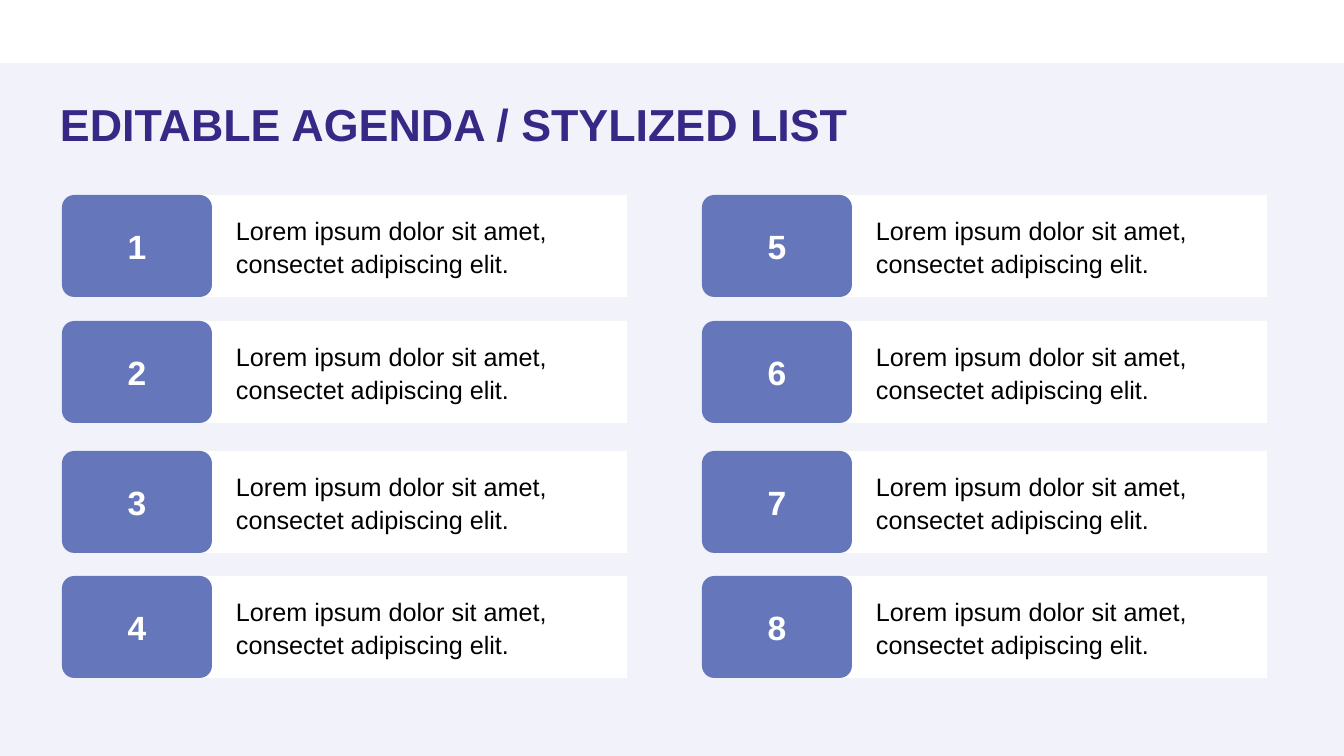
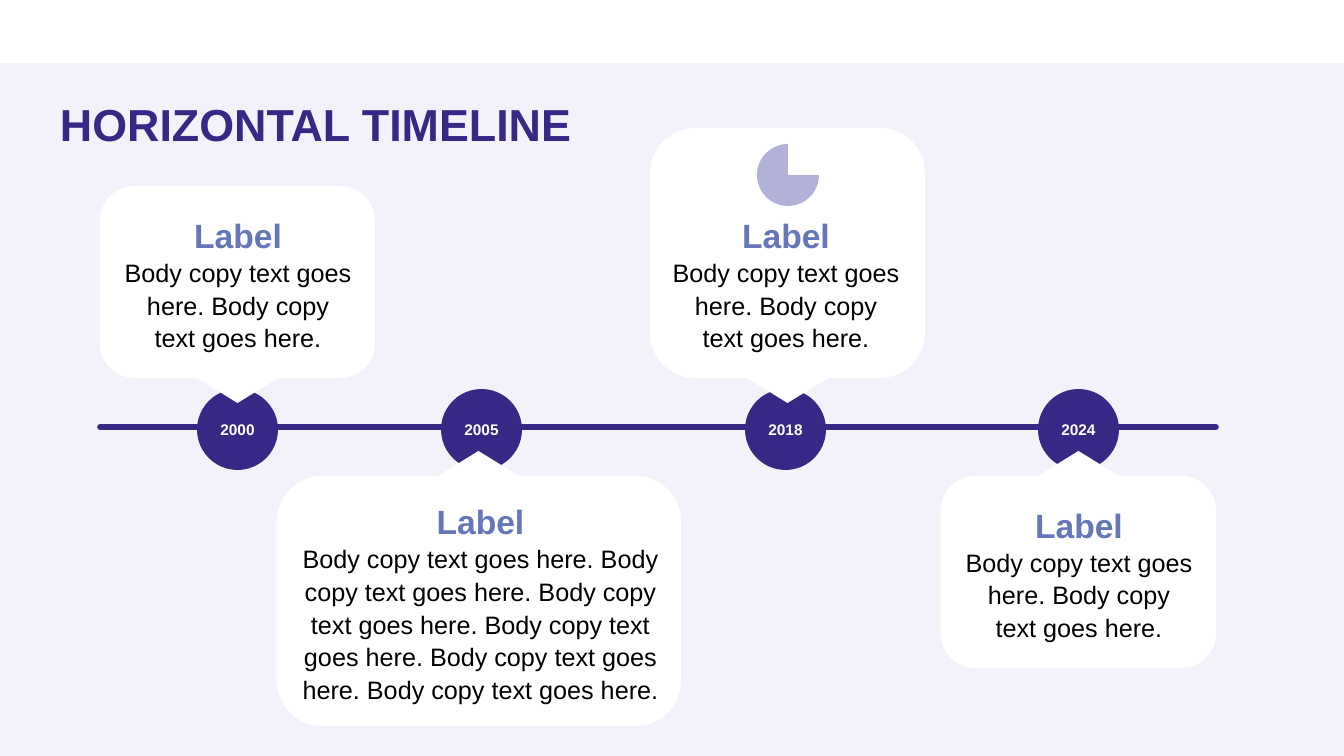
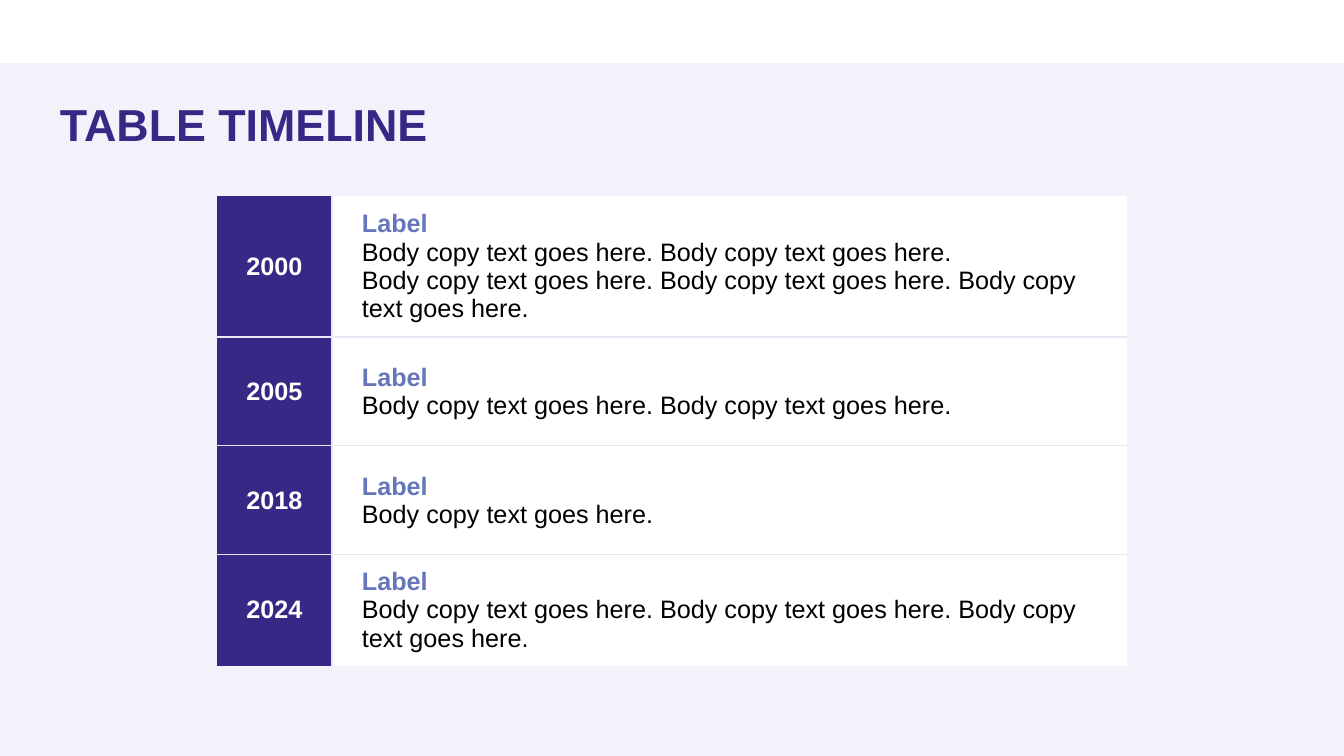
from dataclasses import dataclass

from lxml.etree import SubElement
from pptx import Presentation
from pptx.dml.color import RGBColor
from pptx.enum.shapes import MSO_CONNECTOR, MSO_SHAPE
from pptx.enum.text import MSO_ANCHOR, PP_ALIGN
from pptx.oxml import parse_xml
from pptx.oxml.ns import nsdecls, qn
from pptx.util import Pt

EMU_PER_PX = 914400 / 100.8
SLIDE_WIDTH, SLIDE_HEIGHT = 1344, 756
FONT = "Arial"
COLORS = {
    "panel": "F2F3FA",
    "indigo": "382886",
    "blue": "6577BA",
    "lilac": "B2B1D9",
    "rule": "E6E8F5",
    "white": "FFFFFF",
    "black": "000000",
}
BODY_SPACING = 1.08
SENTENCE = "Body copy text goes here."


@dataclass(frozen=True)
class Rect:
    left: int
    top: int
    width: int
    height: int

    def emu(self) -> tuple:
        return tuple(px(n) for n in (self.left, self.top, self.width, self.height))


@dataclass(frozen=True)
class Line:
    text: str
    size: int
    color: str
    bold: bool = False
    spacing: float = 1.0


@dataclass(frozen=True)
class Milestone:
    year: str
    circle_left: int
    card: Rect
    copy_area: Rect
    sentences: int
    above: bool
    icon: bool = False


@dataclass(frozen=True)
class TableEntry:
    year: str
    paragraphs: tuple


MILESTONES = (
    Milestone("2000", 197, Rect(100, 186, 275, 192), Rect(124, 191, 228, 187), 2, True),
    Milestone("2005", 441, Rect(277, 476, 404, 250), Rect(301, 494, 359, 219), 6, False),
    Milestone("2018", 745, Rect(650, 128, 275, 250), Rect(672, 191, 228, 187), 2, True, True),
    Milestone("2024", 1038, Rect(941, 476, 275, 192), Rect(965, 481, 228, 187), 2, False),
)
ENTRIES = (
    TableEntry("2000", (2, 3)),
    TableEntry("2005", (2,)),
    TableEntry("2018", (1,)),
    TableEntry("2024", (3,)),
)


def px(length: int) -> int:
    return round(length * EMU_PER_PX)


def rgb(name: str) -> RGBColor:
    return RGBColor.from_string(COLORS[name])


def copy_text(sentences: int) -> str:
    return " ".join([SENTENCE] * sentences)


def write(frame, lines: list, align=PP_ALIGN.LEFT, anchor=MSO_ANCHOR.MIDDLE) -> None:
    frame.word_wrap = True
    frame.vertical_anchor = anchor
    for index, line in enumerate(lines):
        para = frame.paragraphs[0] if index == 0 else frame.add_paragraph()
        para.text = line.text
        para.alignment = align
        para.line_spacing = line.spacing
        para.font.name = FONT
        para.font.size = Pt(line.size)
        para.font.bold = line.bold
        para.font.color.rgb = rgb(line.color)


def add_block(page, kind, area: Rect, color: str):
    shape = page.shapes.add_shape(kind, *area.emu())
    shape.shadow.inherit = False
    shape.fill.solid()
    shape.fill.fore_color.rgb = rgb(color)
    shape.line.fill.background()
    return shape


def add_text(page, area: Rect, lines: list, align=PP_ALIGN.LEFT, anchor=MSO_ANCHOR.MIDDLE) -> None:
    frame = page.shapes.add_textbox(*area.emu()).text_frame
    frame.margin_left = frame.margin_top = frame.margin_right = 0
    frame.margin_bottom = px(5)
    write(frame, lines, align, anchor)


def new_page(deck):
    page = deck.slides.add_slide(deck.slide_layouts[6])
    add_block(page, MSO_SHAPE.RECTANGLE, Rect(0, 63, SLIDE_WIDTH, SLIDE_HEIGHT - 63), "panel")
    return page


def add_title(page, text: str) -> None:
    title = Line(text, 32, "indigo", True, 0.9)
    add_text(page, Rect(60, 103, 1225, 84), [title], anchor=MSO_ANCHOR.TOP)


def build_agenda(deck) -> None:
    page = new_page(deck)
    add_title(page, "EDITABLE AGENDA / STYLIZED LIST")
    tops = (195, 321, 451, 576)
    for index in range(8):
        column, row = divmod(index, len(tops))
        left, top = 62 + 640 * column, tops[row]
        # White strip with the item text
        strip = add_block(page, MSO_SHAPE.RECTANGLE, Rect(left + 138, top, 427, 102), "white")
        strip.text_frame.margin_left = px(36)
        item = "Lorem ipsum dolor sit amet, consectet adipiscing elit."
        write(strip.text_frame, [Line(item, 18, "black", spacing=BODY_SPACING)])
        # Number badge over its left end
        badge = add_block(page, MSO_SHAPE.ROUNDED_RECTANGLE, Rect(left, top, 150, 102), "blue")
        badge.adjustments[0] = 0.12
        write(badge.text_frame, [Line(str(index + 1), 24, "white", True)], PP_ALIGN.CENTER)


def add_axis(page) -> None:
    axis = page.shapes.add_connector(MSO_CONNECTOR.STRAIGHT, px(100), px(427), px(1216), px(427))
    axis.line.color.rgb = rgb("indigo")
    axis.line.width = Pt(4)
    axis.line._get_or_add_ln().set("cap", "rnd")
    SubElement(axis._element.spPr, qn("a:effectLst"))


def add_callout(page, milestone: Milestone) -> None:
    card = milestone.card
    body = add_block(page, MSO_SHAPE.ROUNDED_RECTANGLE, card, "white")
    body.adjustments[0] = 0.18
    # Pointer centred on the edge that faces the axis
    width, height = 81, 25
    top = card.top + card.height if milestone.above else card.top - height
    area = Rect(card.left + (card.width - width) // 2, top, width, height)
    pointer = add_block(page, MSO_SHAPE.ISOSCELES_TRIANGLE, area, "white")
    pointer.rotation = 180 if milestone.above else 0
    if milestone.icon:
        add_block(page, MSO_SHAPE.PIE, Rect(757, 144, 62, 62), "lilac")
    lines = [
        Line("Label", 24, "blue", True, BODY_SPACING),
        Line(copy_text(milestone.sentences), 18, "black", spacing=BODY_SPACING),
    ]
    add_text(page, milestone.copy_area, lines, PP_ALIGN.CENTER)


def build_timeline(deck) -> None:
    page = new_page(deck)
    add_title(page, "HORIZONTAL TIMELINE")
    add_axis(page)
    for milestone in MILESTONES:
        circle = add_block(page, MSO_SHAPE.OVAL, Rect(milestone.circle_left, 389, 81, 81), "indigo")
        frame = circle.text_frame
        frame.margin_left = frame.margin_right = 0
        write(frame, [Line(milestone.year, 11, "white", True)], PP_ALIGN.CENTER)
    for milestone in MILESTONES:
        add_callout(page, milestone)


def set_borders(cell, visible: set) -> None:
    properties = cell._tc.get_or_add_tcPr()
    for index, side in enumerate("LRTB"):
        paint = "<a:noFill/>"
        if side in visible:
            paint = f'<a:solidFill><a:srgbClr val="{COLORS["rule"]}"/></a:solidFill>'
        border = f'<a:ln{side} w="12700" {nsdecls("a")}>{paint}</a:ln{side}>'
        properties.insert(index, parse_xml(border))


def build_table(deck) -> None:
    page = new_page(deck)
    add_title(page, "TABLE TIMELINE")
    row_height = 109
    area = Rect(217, 196, 910, row_height * len(ENTRIES))
    table = page.shapes.add_table(len(ENTRIES), 2, *area.emu()).table
    table.first_row = table.horz_banding = False
    for column, width in zip(table.columns, (115, 795)):
        column.width = px(width)
    for index, entry in enumerate(ENTRIES):
        table.rows[index].height = px(row_height)
        year, detail = table.cell(index, 0), table.cell(index, 1)
        write(year.text_frame, [Line(entry.year, 18, "white", True)], PP_ALIGN.CENTER)
        lines = [Line("Label", 18, "blue", True)]
        lines += [Line(copy_text(count), 18, "black") for count in entry.paragraphs]
        write(detail.text_frame, lines)
        detail.margin_left = px(30)
        detail.margin_top = detail.margin_right = detail.margin_bottom = px(10)
        # Rules between the cells only
        inner = {"T"} if index else set()
        if index < len(ENTRIES) - 1:
            inner.add("B")
        for cell, color, side in ((year, "indigo", "R"), (detail, "white", "L")):
            cell.vertical_anchor = MSO_ANCHOR.MIDDLE
            cell.fill.solid()
            cell.fill.fore_color.rgb = rgb(color)
            set_borders(cell, inner | {side})


def main() -> None:
    deck = Presentation()
    deck.slide_width, deck.slide_height = px(SLIDE_WIDTH), px(SLIDE_HEIGHT)
    build_agenda(deck)
    build_timeline(deck)
    build_table(deck)
    deck.save("out.pptx")


if __name__ == "__main__":
    main()
